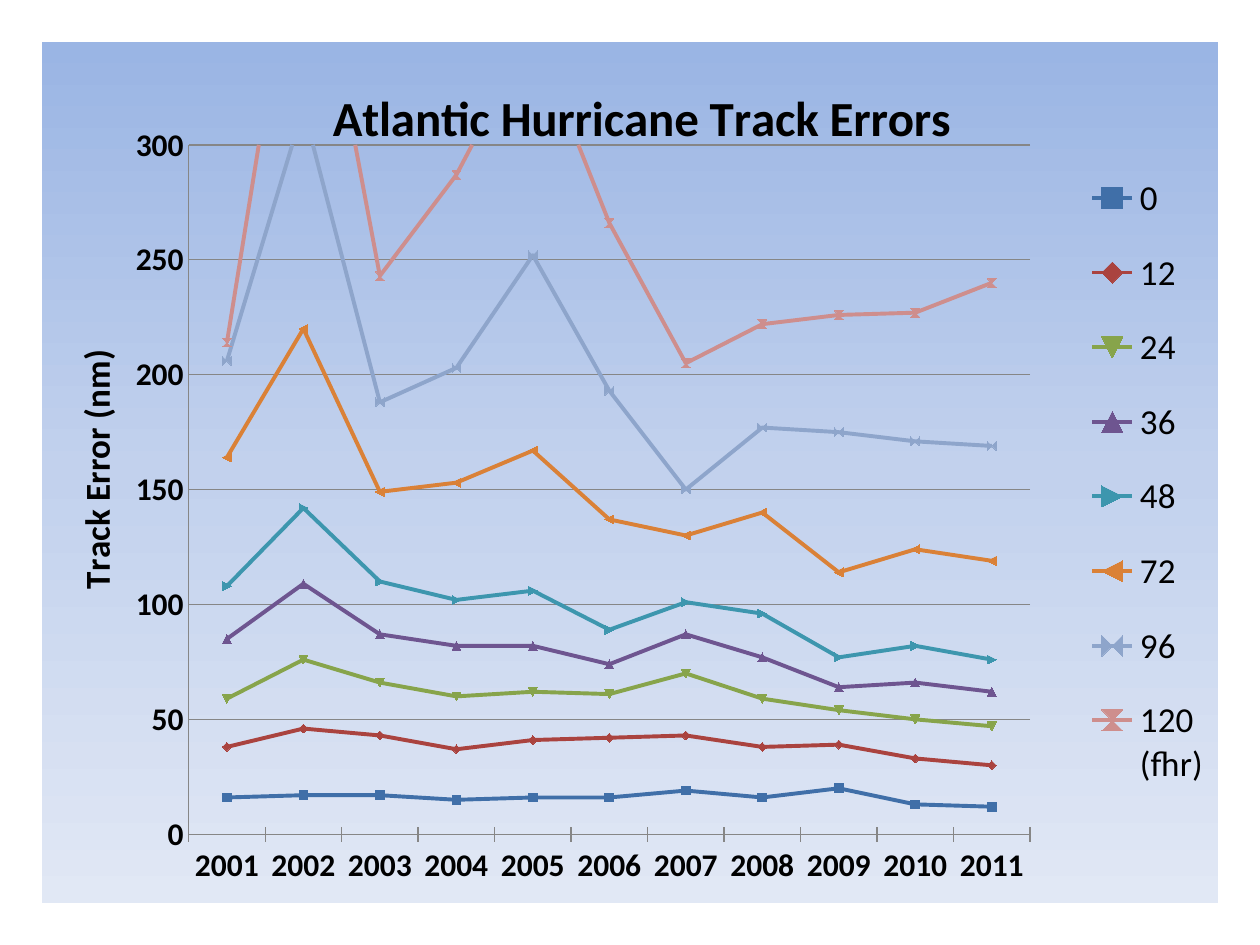
from dataclasses import dataclass

from lxml.etree import fromstring
from pptx import Presentation
from pptx.chart.data import CategoryChartData
from pptx.dml.color import RGBColor
from pptx.enum.chart import XL_CHART_TYPE as ChartType
from pptx.enum.chart import XL_LEGEND_POSITION as LegendPosition
from pptx.enum.chart import XL_TICK_MARK as TickMark
from pptx.oxml.ns import nsdecls, qn
from pptx.util import Inches, Pt


@dataclass(frozen=True)
class Theme:
    font: str = "Calibri"
    text: str = "000000"
    rule: str = "868686"
    title_size: int = 28
    label_size: int = 20
    tick_size: int = 18
    backdrop: tuple = ((0, "9AB5E4"), (50, "C2D1ED"), (100, "E1E8F5"))
    lines: tuple = ("406FA8", "AA433F", "87A44B", "6E5590",
                    "3D96AE", "DA8137", "8EA5CB", "CE8E8D")


THEME = Theme()
YEARS = [str(year) for year in range(2001, 2012)]
ERRORS_BY_FORECAST_HOUR = {
    "0": (16, 17, 17, 15, 16, 16, 19, 16, 20, 13, 12),
    "12": (38, 46, 43, 37, 41, 42, 43, 38, 39, 33, 30),
    "24": (59, 76, 66, 60, 62, 61, 70, 59, 54, 50, 47),
    "36": (85, 109, 87, 82, 82, 74, 87, 77, 64, 66, 62),
    "48": (108, 142, 110, 102, 106, 89, 101, 96, 77, 82, 76),
    "72": (164, 220, 149, 153, 167, 137, 130, 140, 114, 124, 119),
    "96": (206, 316, 188, 203, 252, 193, 150, 177, 175, 171, 169),
    "120 (fhr)": (214, 420, 243, 287, 350, 266, 205, 222, 226, 227, 240),
}


def style_font(font, size, bold):
    values = {"name": THEME.font, "size": Pt(size), "bold": bold}
    for attribute, value in values.items():
        setattr(font, attribute, value)
    font.color.rgb = RGBColor.from_string(THEME.text)


def style_line(line, color, width):
    line.color.rgb = RGBColor.from_string(color)
    line.width = Pt(width)


def write_title(title, text, size):
    title.text_frame.text = text
    style_font(title.text_frame.paragraphs[0].runs[0].font, size, True)


def set_layout(part, predecessor=None, inner=False, **fractions):
    """Position a chart part by fractions of the chart's width and height."""
    for old in part.findall(qn("c:layout")):
        part.remove(old)
    target = '<c:layoutTarget val="inner"/>' if inner else ""
    modes = "".join(f'<c:{side}Mode val="edge"/>' for side in "xy")
    sizes = "".join(f'<c:{side} val="{value}"/>'
                    for side, value in fractions.items())
    layout = fromstring(
        f'<c:layout {nsdecls("c")}><c:manualLayout>{target}{modes}{sizes}'
        '</c:manualLayout></c:layout>')
    if predecessor:
        part.find(qn(predecessor)).addnext(layout)
    else:
        part.insert(0, layout)


def fill_backdrop(chart_space):
    stops = "".join(
        f'<a:gs pos="{percent * 1000}"><a:srgbClr val="{color}"/></a:gs>'
        for percent, color in THEME.backdrop)
    chart_space.find(qn("c:chart")).addnext(fromstring(
        f'<c:spPr {nsdecls("c", "a")}><a:gradFill><a:gsLst>{stops}</a:gsLst>'
        '<a:lin ang="5400000" scaled="0"/></a:gradFill>'
        '<a:ln><a:noFill/></a:ln></c:spPr>'))


def style_axes(chart):
    years, errors = chart.category_axis, chart.value_axis
    for axis, tick in ((years, TickMark.CROSS), (errors, TickMark.NONE)):
        style_font(axis.tick_labels.font, THEME.tick_size, True)
        style_line(axis.format.line, THEME.rule, 0.75)
        axis.major_tick_mark = tick
        axis.minor_tick_mark = TickMark.NONE
    scale = {"minimum_scale": 0, "maximum_scale": 300, "major_unit": 50}
    for attribute, value in scale.items():
        setattr(errors, attribute, value)
    style_line(errors.major_gridlines.format.line, THEME.rule, 0.75)
    write_title(errors.axis_title, "Track Error (nm)", THEME.label_size)


def style_series(plot):
    for series, color in zip(plot.series, THEME.lines):
        series.smooth = False
        style_line(series.format.line, color, 2.25)
        series.marker.size = 5
        marker = series.marker.format
        marker.fill.solid()
        marker.fill.fore_color.rgb = RGBColor.from_string(color)
        style_line(marker.line, color, 0.75)


def add_track_error_chart(slide, left, top, width, height):
    data = CategoryChartData()
    data.categories = YEARS
    for hour, errors in ERRORS_BY_FORECAST_HOUR.items():
        data.add_series(hour, errors)
    chart = slide.shapes.add_chart(
        ChartType.LINE_MARKERS, left, top, width, height, data).chart

    style_font(chart.font, THEME.tick_size, False)
    chart.has_title = True
    write_title(chart.chart_title, "Atlantic Hurricane Track Errors",
                THEME.title_size)
    chart.has_legend = True
    chart.legend.position = LegendPosition.RIGHT
    chart.legend.include_in_layout = False
    style_font(chart.legend.font, THEME.label_size, False)
    style_axes(chart)
    chart.plots[0].vary_by_categories = False
    style_series(chart.plots[0])

    chart_space = chart.element
    fill_backdrop(chart_space)
    area = chart_space.find(qn("c:chart"))
    plot_area = area.find(qn("c:plotArea"))
    set_layout(plot_area, inner=True, x=0.125, y=0.12, w=0.715, h=0.8)
    set_layout(area.find(qn("c:title")), "c:tx", x=0.24, y=0.04)
    set_layout(plot_area.find(qn("c:valAx")).find(qn("c:title")), "c:tx",
               x=0.02, y=0.35)
    set_layout(area.find(qn("c:legend")), "c:legendPos",
               x=0.88, y=0.12, w=0.12, h=0.78)


def main():
    deck = Presentation()
    deck.slide_width, deck.slide_height = Inches(10), Inches(7.5)
    blank_layout = deck.slide_layouts[6]
    slide = deck.slides.add_slide(blank_layout)
    margin = Inches(0.33)
    add_track_error_chart(slide, margin, margin,
                          deck.slide_width - 2 * margin,
                          deck.slide_height - 2 * margin)
    deck.save("out.pptx")


if __name__ == "__main__":
    main()
